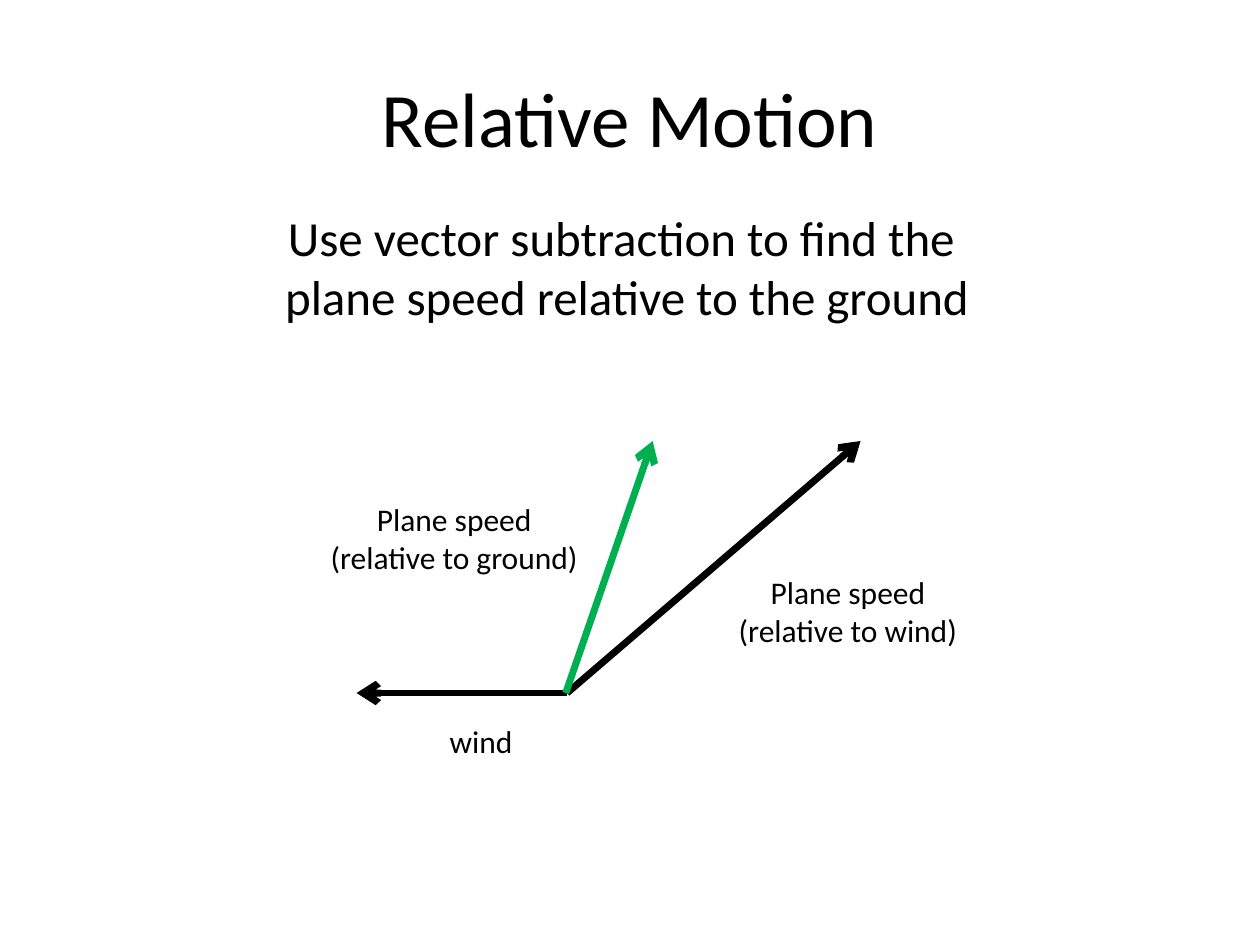
import pptx
import pptx.util
import pptx.dml.color
import pptx.enum.shapes
import pptx.enum.text
import pptx.oxml
import pptx.oxml.ns
from pptx.util import Inches

BLACK = "000000"
GREEN = "00B050"


def paint(code):
    return pptx.dml.color.RGBColor.from_string(code)


def write(frame, text, size=18, color=BLACK, font="Calibri", align="CENTER"):
    for i, line in enumerate(text.split("\n")):
        para = frame.paragraphs[0] if i == 0 else frame.add_paragraph()
        para.alignment = getattr(pptx.enum.text.PP_ALIGN, align)
        run = para.add_run()
        run.text = line
        run.font.size = pptx.util.Pt(size)
        run.font.name = font
        run.font.color.rgb = paint(color)


class Board:
    """Holds the line style and the current slide."""

    width = 4
    head = "arrow"

    def __init__(self, slide):
        self.slide = slide

    def label(self, text, left, top, width, height, **style):
        box = self.slide.shapes.add_textbox(*map(Inches, (left, top, width, height)))
        box.text_frame.word_wrap = False
        box.text_frame.auto_size = pptx.enum.text.MSO_AUTO_SIZE.SHAPE_TO_FIT_TEXT
        write(box.text_frame, text, **style)

    def title(self, text, left, top, width, height, **style):
        box = self.slide.shapes.add_textbox(*map(Inches, (left, top, width, height)))
        box.text_frame.word_wrap = True
        box.text_frame.vertical_anchor = pptx.enum.text.MSO_ANCHOR.MIDDLE
        write(box.text_frame, text, **style)

    def vector(self, start, end, color=BLACK):
        kind = pptx.enum.shapes.MSO_CONNECTOR.STRAIGHT
        link = self.slide.shapes.add_connector(kind, *map(Inches, start + end))
        link.line.color.rgb = paint(color)
        link.line.width = pptx.util.Pt(self.width)
        # Arrowhead at the end, and no shadow
        tail = pptx.oxml.ns.qn("a:tailEnd")
        line = link.line._get_or_add_ln()
        line.append(line.makeelement(tail, {"type": self.head}))
        props = link._element.spPr
        props.append(props.makeelement(pptx.oxml.ns.qn("a:effectLst"), {}))


def main():
    deck = pptx.Presentation()
    deck.slide_width, deck.slide_height = Inches(10), Inches(7.5)
    board = Board(deck.slides.add_slide(deck.slide_layouts[6]))

    # Heading and task
    board.title("Relative Motion", 0.5, 0.3, 9, 1.25, size=44)
    board.label("Use vector subtraction to find the \nplane speed relative to the ground",
                2.13, 1.6, 5.69, 1.04, size=28)

    # Vectors from a shared origin
    origin = (4.5, 5.5)
    board.vector(origin, (6.83, 3.5))
    board.vector(origin, (2.83, 5.5))
    board.vector((4.49, 5.5), (5.18, 3.5), color=GREEN)

    # Vector names
    board.label("wind", 3.47, 5.68, 0.71, 0.4, align="LEFT")
    board.label("Plane speed\n(relative to wind)", 5.75, 4.5, 1.96, 0.71)
    board.label("Plane speed\n(relative to ground)", 2.51, 3.92, 2.19, 0.71)

    deck.save("out.pptx")


if __name__ == "__main__":
    main()
